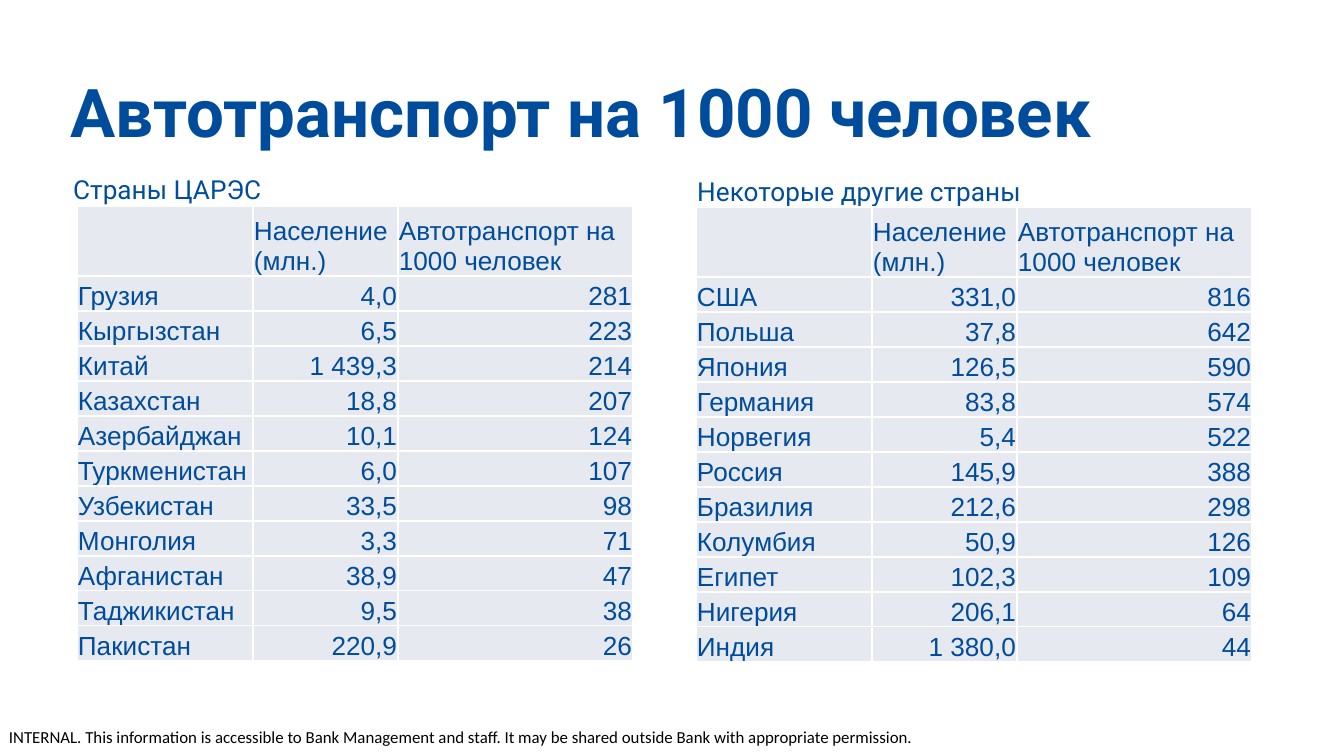
"""Build a slide comparing vehicles per 1000 people in two groups of countries."""
import lxml.etree
import pptx
import pptx.dml.color
import pptx.enum.text
import pptx.oxml.ns
import pptx.util

PX = 9144000 / 1344
HUES = {"title": "004C9C", "label": "004D9D", "cell": "E7E9F0", "line": "FFFFFF", "note": "000000"}
ALIGN = pptx.enum.text.PP_ALIGN
ANCHOR = pptx.enum.text.MSO_ANCHOR
FIT = pptx.enum.text.MSO_AUTO_SIZE
qn = pptx.oxml.ns.qn


def px(*nums):
    return [pptx.util.Emu(round(num * PX)) for num in nums]


def write(para, text, font, size, hue, bold=False):
    run = para.add_run()
    run.text = text
    run.font.name = font
    run.font.size = pptx.util.Pt(size)
    run.font.bold = bold
    run.font.color.rgb = pptx.dml.color.RGBColor.from_string(HUES[hue])


deck = pptx.Presentation()
deck.slide_width, deck.slide_height = px(1344, 756)
slide = deck.slides.add_slide(deck.slide_layouts[6])

note = slide.shapes.add_textbox(*px(9, 727, 960, 20)).text_frame
note.margin_left = note.margin_top = note.margin_right = note.margin_bottom = 0
note.word_wrap = True
write(note.paragraphs[0], "INTERNAL. This information is accessible to Bank Management and staff. "
      "It may be shared outside Bank with appropriate permission.", "Calibri", 9, "note")

title = slide.shapes.add_textbox(*px(57, 59, 1231, 103)).text_frame
title.word_wrap = True
title.vertical_anchor = ANCHOR.MIDDLE
write(title.paragraphs[0], "Автотранспорт на 1000 человек", "Roboto", 36, "title", True)

HEAD = ("", "Население (млн.)", "Автотранспорт на 1000 человек")
WIDTHS = (176, 145, 235)
HEAD_H, ROW_H = 70, 35

carec = [
    ("Грузия", "4,0", "281"),
    ("Кыргызстан", "6,5", "223"),
    ("Китай", "1 439,3", "214"),
    ("Казахстан", "18,8", "207"),
    ("Азербайджан", "10,1", "124"),
    ("Туркменистан", "6,0", "107"),
    ("Узбекистан", "33,5", "98"),
    ("Монголия", "3,3", "71"),
    ("Афганистан", "38,9", "47"),
    ("Таджикистан", "9,5", "38"),
    ("Пакистан", "220,9", "26"),
]
others = [
    ("США", "331,0", "816"),
    ("Польша", "37,8", "642"),
    ("Япония", "126,5", "590"),
    ("Германия", "83,8", "574"),
    ("Норвегия", "5,4", "522"),
    ("Россия", "145,9", "388"),
    ("Бразилия", "212,6", "298"),
    ("Колумбия", "50,9", "126"),
    ("Египет", "102,3", "109"),
    ("Нигерия", "206,1", "64"),
    ("Индия", "1 380,0", "44"),
]
groups = [
    ("Страны ЦАРЭС", (60, 154, 216, 54), (77, 206), carec),
    ("Некоторые другие страны", (684, 156, 355, 54), (696, 207), others),
]

for name, box, spot, data in groups:
    label = slide.shapes.add_textbox(*px(*box)).text_frame
    label.word_wrap = False
    label.auto_size = FIT.SHAPE_TO_FIT_TEXT
    label.paragraphs[0].line_spacing = 1.4
    write(label.paragraphs[0], name, "Roboto", 14, "label")

    rows = [HEAD, *data]
    size = (sum(WIDTHS), HEAD_H + ROW_H * len(data))
    grid = slide.shapes.add_table(len(rows), len(HEAD), *px(*spot, *size)).table
    grid.first_row = grid.horz_banding = False
    for col, width in zip(grid.columns, px(*WIDTHS)):
        col.width = width
    for r, row in enumerate(rows):
        grid.rows[r].height = px(ROW_H if r else HEAD_H)[0]
        for c, text in enumerate(row):
            cell = grid.cell(r, c)
            cell.margin_left, cell.margin_top, cell.margin_right, cell.margin_bottom = px(1, 1, 1, 0)
            cell.vertical_anchor = ANCHOR.BOTTOM
            props = cell._tc.get_or_add_tcPr()
            for side in ("a:lnL", "a:lnR", "a:lnT", "a:lnB"):
                edge = lxml.etree.SubElement(props, qn(side), w=str(pptx.util.Pt(1)))
                paint = lxml.etree.SubElement(edge, qn("a:solidFill"))
                lxml.etree.SubElement(paint, qn("a:srgbClr"), val=HUES["line"])
            cell.fill.solid()
            cell.fill.fore_color.rgb = pptx.dml.color.RGBColor.from_string(HUES["cell"])
            para = cell.text_frame.paragraphs[0]
            para.alignment = ALIGN.RIGHT if r and c else ALIGN.LEFT
            if text:
                write(para, text, "Arial", 14, "title")

deck.save("out.pptx")
